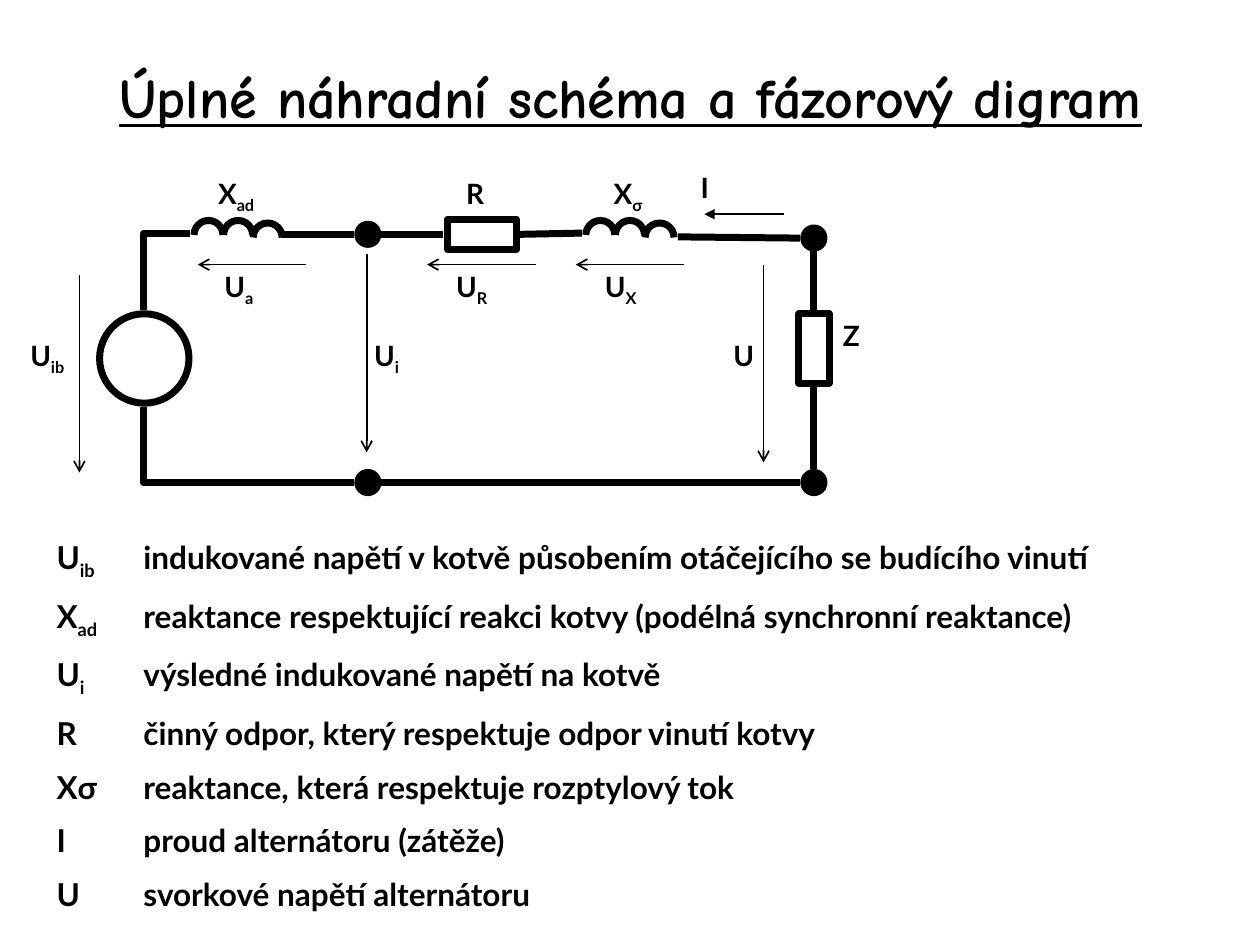
from dataclasses import dataclass
from typing import NamedTuple

import pptx
import pptx.dml.color
import pptx.enum.shapes
import pptx.enum.text
import pptx.oxml.ns
import pptx.util
from lxml import etree
from pptx.util import Inches

SHAPE = pptx.enum.shapes.MSO_SHAPE
CONNECTOR = pptx.enum.shapes.MSO_CONNECTOR


@dataclass(frozen=True)
class Theme:
    ink: pptx.dml.color.RGBColor = pptx.dml.color.RGBColor(0, 0, 0)
    title_font: str = "Comic Neue"
    body_font: str = "Lato"
    title_size: float = 32
    label_size: float = 16
    legend_size: float = 18
    thin: float = 1
    thick: float = 4


THEME = Theme()


class Symbol(NamedTuple):
    name: str
    subscript: str = ""


class Label(NamedTuple):
    symbol: Symbol
    left: float
    top: float
    width: float


class Line(NamedTuple):
    x1: float
    y1: float
    x2: float
    y2: float
    head: str = ""


class Part(NamedTuple):
    kind: SHAPE
    left: float
    top: float
    width: float
    height: float
    filled: bool = False


class Entry(NamedTuple):
    symbol: Symbol
    meaning: str


U_IB, U_I, X_AD = Symbol("U", "ib"), Symbol("U", "i"), Symbol("X", "ad")
U, R, I = Symbol("U"), Symbol("R"), Symbol("I")

LABELS = [
    Label(U_IB, 0.2, 2.65, 0.39), Label(U_I, 2.93, 2.65, 0.29), Label(U, 5.78, 2.65, 0.24),
    Label(Symbol("U", "a"), 1.74, 2.1, 0.34),
    Label(Symbol("U", "R"), 3.58, 2.1, 0.36),
    Label(Symbol("U", "X"), 4.76, 2.1, 0.35),
    Label(X_AD, 1.69, 1.36, 0.42), Label(R, 3.66, 1.36, 0.24),
    Label(Symbol("X", "σ"), 4.83, 1.36, 0.32),
    Label(Symbol("Z"), 6.65, 2.49, 0.22), Label(I, 5.52, 1.31, 0.19),
]
VOLTAGE_DROP, VOLTAGE_LENGTH = 1.57, 0.86
ARROWS = [
    *(Line(x, y, x, y + VOLTAGE_DROP, "arrow") for x, y in ((2.91, 2.02), (0.63, 2.18), (6.06, 2.1))),
    *(Line(x + VOLTAGE_LENGTH, 2.1, x, 2.1, "arrow") for x in (1.57, 3.39, 4.57)),
    Line(6.22, 1.7, 5.59, 1.7, "triangle"),
]
WIRES = [
    Line(2.23, 1.86, 2.81, 1.86), Line(3.02, 1.86, 3.52, 1.86),
    Line(4.12, 1.86, 4.62, 1.85), Line(5.38, 1.88, 6.35, 1.89),
    Line(3.02, 3.83, 6.35, 3.83),
    Line(6.46, 1.99, 6.46, 2.46), Line(6.46, 3.07, 6.46, 3.72),
]
CORNER_WIRES = [Line(2.81, 3.83, 1.14, 3.23), Line(1.51, 1.85, 1.14, 2.46)]
NODE = 0.16
PARTS = [
    Part(SHAPE.OVAL, 0.79, 2.49, 0.71, 0.71),
    Part(SHAPE.RECTANGLE, 3.55, 1.74, 0.55, 0.24),
    Part(SHAPE.RECTANGLE, 6.34, 2.49, 0.24, 0.55),
    *(Part(SHAPE.OVAL, x, y, NODE, NODE, True)
      for x, y in ((6.38, 3.75), (2.84, 3.75), (6.38, 1.81), (2.84, 1.78))),
]
TURN = 0.23
COIL_LEFTS = (1.54, 4.65)
TURN_OFFSETS = ((0, 1.75), (0.235, 1.75), (0.47, 1.77))
LEGEND = [
    Entry(U_IB, "indukované napětí v kotvě působením otáčejícího se budícího vinutí"),
    Entry(X_AD, "reaktance respektující reakci kotvy (podélná synchronní reaktance)"),
    Entry(U_I, "výsledné indukované napětí na kotvě"),
    Entry(R, "činný odpor, který respektuje odpor vinutí kotvy"),
    Entry(Symbol("Xσ"), "reaktance, která respektuje rozptylový tok"),
    Entry(I, "proud alternátoru (zátěže)"),
    Entry(U, "svorkové napětí alternátoru"),
]


def write(para, text: str, *, size: float, font: str = THEME.body_font,
          underline: bool = False, subscript: bool = False) -> None:
    span = para.add_run()
    span.text = text
    span.font.name = font
    span.font.size = pptx.util.Pt(size)
    span.font.bold = True
    span.font.color.rgb = THEME.ink
    if underline:
        span.font.underline = True
    if subscript:
        span.font._element.set("baseline", "-25000")


def write_symbol(para, symbol: Symbol, size: float) -> None:
    write(para, symbol.name, size=size)
    if symbol.subscript:
        write(para, symbol.subscript, size=size, subscript=True)


def add_text_frame(page, left: float, top: float, width: float, height: float, wrap: bool = True):
    box = page.shapes.add_textbox(Inches(left), Inches(top), Inches(width), Inches(height))
    box.text_frame.word_wrap = wrap
    return box.text_frame


def add_title(page, text: str) -> None:
    frame = add_text_frame(page, 0.2, 0.3, 9.61, 0.93)
    frame.vertical_anchor = pptx.enum.text.MSO_ANCHOR.MIDDLE
    para = frame.paragraphs[0]
    para.alignment = pptx.enum.text.PP_ALIGN.CENTER
    write(para, text, size=THEME.title_size, font=THEME.title_font, underline=True)


def add_label(page, label: Label) -> None:
    frame = add_text_frame(page, label.left, label.top, label.width, 0.35, wrap=False)
    frame.auto_size = pptx.enum.text.MSO_AUTO_SIZE.SHAPE_TO_FIT_TEXT
    frame.margin_left = frame.margin_right = Inches(0.04)
    frame.margin_top = frame.margin_bottom = Inches(0.04)
    write_symbol(frame.paragraphs[0], label.symbol, THEME.label_size)


def add_legend(page, entries: list[Entry]) -> None:
    frame = add_text_frame(page, 0.35, 4.22, 9.45, 3.11)
    for index, entry in enumerate(entries):
        para = frame.add_paragraph() if index else frame.paragraphs[0]
        para.space_before = pptx.util.Pt(THEME.legend_size / 2)
        properties = para._p.get_or_add_pPr()
        properties.set("marL", str(Inches(0.69)))
        properties.set("indent", str(Inches(-0.69)))
        write_symbol(para, entry.symbol, THEME.legend_size)
        write(para, "\t" + entry.meaning, size=THEME.legend_size)


def add_line(page, line: Line, weight: float, corner: bool = False) -> None:
    """Draw a line; a corner runs level first, then upright."""
    kind = CONNECTOR.ELBOW if corner else CONNECTOR.STRAIGHT
    connector = page.shapes.add_connector(kind, *map(Inches, line[:4]))
    connector.line.color.rgb = THEME.ink
    connector.line.width = pptx.util.Pt(weight)
    properties = connector._element.spPr
    if corner:
        properties.find(pptx.oxml.ns.qn("a:prstGeom")).set("prst", "bentConnector2")
    if line.head:
        etree.SubElement(connector.line._get_or_add_ln(), pptx.oxml.ns.qn("a:tailEnd"), type=line.head)
    etree.SubElement(properties, pptx.oxml.ns.qn("a:effectLst"))


def add_part(page, part: Part):
    shape = page.shapes.add_shape(part.kind, *map(Inches, part[1:5]))
    shape.shadow.inherit = False
    shape.line.color.rgb = THEME.ink
    shape.line.width = pptx.util.Pt(THEME.thick)
    if part.filled:
        shape.fill.solid()
        shape.fill.fore_color.rgb = THEME.ink
    else:
        shape.fill.background()
    return shape


def add_coil(page, left: float) -> None:
    for offset, top in TURN_OFFSETS:
        arc = add_part(page, Part(SHAPE.ARC, left + offset, top, TURN, TURN))
        # Upper half circle: 180 degrees to 0, in units of 100000/60000 degree
        arc.adjustments[0] = 108
        arc.adjustments[1] = 0


def main() -> None:
    deck = pptx.Presentation()
    deck.slide_width, deck.slide_height = Inches(10), Inches(7.5)
    page = deck.slides.add_slide(deck.slide_layouts[6])
    add_title(page, "Úplné náhradní schéma a fázorový digram")
    for arrow in ARROWS:
        add_line(page, arrow, THEME.thin)
    for label in LABELS:
        add_label(page, label)
    for part in PARTS:
        add_part(page, part)
    for left in COIL_LEFTS:
        add_coil(page, left)
    for wire in WIRES:
        add_line(page, wire, THEME.thick)
    for wire in CORNER_WIRES:
        add_line(page, wire, THEME.thick, corner=True)
    add_legend(page, LEGEND)
    deck.save("out.pptx")


if __name__ == "__main__":
    main()
